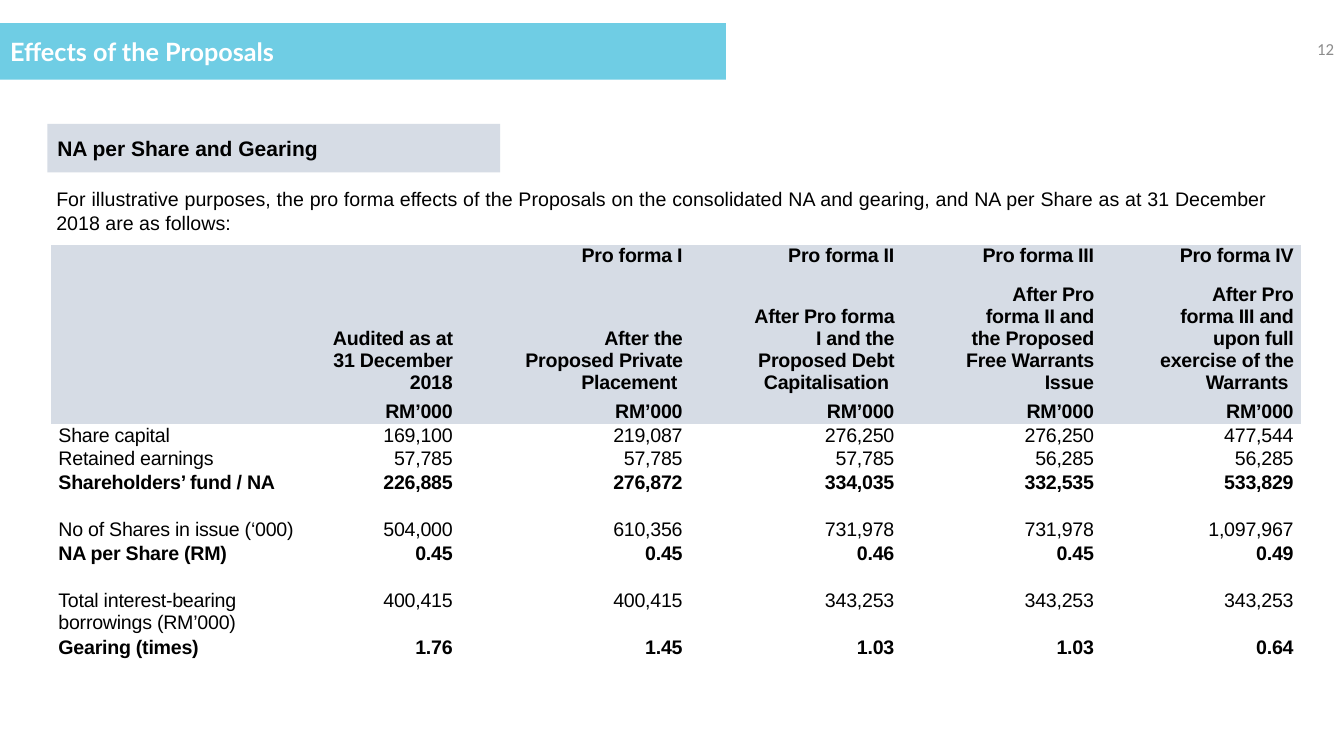
from lxml import etree
from pptx import Presentation
from pptx.dml.color import RGBColor
from pptx.enum.shapes import MSO_SHAPE
from pptx.enum.text import MSO_ANCHOR, MSO_AUTO_SIZE, PP_ALIGN
from pptx.oxml.ns import qn
from pptx.util import Inches, Pt

LEFT, RIGHT, JUSTIFY = PP_ALIGN.LEFT, PP_ALIGN.RIGHT, PP_ALIGN.JUSTIFY
TOP, MIDDLE, BOTTOM = MSO_ANCHOR.TOP, MSO_ANCHOR.MIDDLE, MSO_ANCHOR.BOTTOM
RECTANGLE = MSO_SHAPE.RECTANGLE
NO_AUTOFIT = MSO_AUTO_SIZE.NONE
TITLE_ONLY = 5
NO_GRID_STYLE = "{2D5ABB26-0587-4C30-8999-92F81FD0307C}"

COLORS = {
    "banner": "6FCDE4",
    "panel": "D6DCE5",
    "text": "000000",
    "white": "FFFFFF",
    "page": "8C8C8C",
}

COLUMN_WIDTHS = [2.5, 1.55, 2.28, 2.1, 1.98, 1.98]
TABLE_HEIGHT = 4.04
SCENARIO_HEIGHT, BASIS_HEIGHT, WRAPPED_HEIGHT = 0.31, 1.17, 0.46

HEADER_ROWS = [
    ["", "", "Pro forma I", "Pro forma II", "Pro forma III", "Pro forma IV"],
    ["", "Audited as at 31 December 2018",
     "After the Proposed Private Placement ",
     "After Pro forma I and the Proposed Debt Capitalisation ",
     "After Pro forma II and the Proposed Free Warrants Issue",
     "After Pro forma III and upon full exercise of the Warrants "],
    [""] + ["RM’000"] * 5,
]
BLANK_ROW = [""] * 6
BODY_ROWS = [
    ["Share capital", "169,100", "219,087", "276,250", "276,250", "477,544"],
    ["Retained earnings", "57,785", "57,785", "57,785", "56,285", "56,285"],
    ["Shareholders’ fund / NA", "226,885", "276,872", "334,035", "332,535", "533,829"],
    BLANK_ROW,
    ["No of Shares in issue (‘000)", "504,000", "610,356", "731,978", "731,978", "1,097,967"],
    ["NA per Share (RM)", "0.45", "0.45", "0.46", "0.45", "0.49"],
    BLANK_ROW,
    ["Total interest-bearing borrowings (RM’000)",
     "400,415", "400,415", "343,253", "343,253", "343,253"],
    ["Gearing (times)", "1.76", "1.45", "1.03", "1.03", "0.64"],
]
WRAPPED_LABEL = "Total interest-bearing borrowings (RM’000)"
BOLD_LABELS = {"Shareholders’ fund / NA", "NA per Share (RM)", "Gearing (times)"}


def rgb(name):
    return RGBColor.from_string(COLORS[name])


def write(frame, text, size=14, font="Arial", color="text", bold=False,
          align=LEFT, indent=0, spacing=0):
    paragraph = frame.paragraphs[0]
    paragraph.alignment = align
    if indent:
        properties = paragraph._p.get_or_add_pPr()
        properties.set("marL", str(Inches(indent)))
        properties.set("indent", "0")
    if not text:
        # Keeps an empty table row at the height of its neighbours
        end = etree.SubElement(paragraph._p, qn("a:endParaRPr"))
        end.set("sz", str(size * 100))
        return
    run = paragraph.add_run()
    run.text = text
    run.font.size = Pt(size)
    run.font.name = font
    run.font.bold = bold
    run.font.color.rgb = rgb(color)
    if spacing:
        run.font._element.set("spc", str(round(spacing * 100)))


def add_title(slide, text):
    title = slide.shapes.title
    title.left, title.top = Inches(0), Inches(0.23)
    title.width, title.height = Inches(7.2), Inches(0.56)
    title.fill.solid()
    title.fill.fore_color.rgb = rgb("banner")
    frame = title.text_frame
    frame.auto_size = NO_AUTOFIT
    frame.vertical_anchor = MIDDLE
    write(frame, text, size=18, font="Lato", color="white", bold=True)


def add_text(slide, text, left, top, width, height, anchor=TOP, **style):
    frame = slide.shapes.add_textbox(
        Inches(left), Inches(top), Inches(width), Inches(height)).text_frame
    frame.word_wrap = True
    frame.vertical_anchor = anchor
    write(frame, text, **style)


def add_section_label(slide, text):
    panel = slide.shapes.add_shape(
        RECTANGLE, Inches(0.47), Inches(1.23), Inches(4.49), Inches(0.48))
    panel.shadow.inherit = False
    panel.fill.solid()
    panel.fill.fore_color.rgb = rgb("panel")
    panel.line.fill.background()
    panel.text_frame.vertical_anchor = MIDDLE
    write(panel.text_frame, text, size=15, bold=True)


def fill_cell(cell, text, header, bold, first_column, indent, bottom_gap):
    cell.margin_left = cell.margin_right = Inches(0.07)
    cell.margin_top, cell.margin_bottom = Inches(0), Inches(bottom_gap)
    cell.vertical_anchor = BOTTOM if bottom_gap else TOP
    if header:
        cell.fill.solid()
        cell.fill.fore_color.rgb = rgb("panel")
    else:
        cell.fill.background()
    write(cell.text_frame, text, bold=bold, spacing=-0.2,
          align=LEFT if first_column else RIGHT, indent=indent)


def add_effects_table(slide):
    rows = HEADER_ROWS + BODY_ROWS
    table = slide.shapes.add_table(
        len(rows), len(COLUMN_WIDTHS), Inches(0.51), Inches(2.43),
        Inches(sum(COLUMN_WIDTHS)), Inches(TABLE_HEIGHT)).table
    table.first_row = table.horz_banding = False
    table._tbl.tblPr.find(qn("a:tableStyleId")).text = NO_GRID_STYLE
    for column, width in zip(table.columns, COLUMN_WIDTHS):
        column.width = Inches(width)

    # Single-line rows share the height left by the three taller ones
    tall = SCENARIO_HEIGHT + BASIS_HEIGHT + WRAPPED_HEIGHT
    line_height = (TABLE_HEIGHT - tall) / (len(rows) - 3)
    for r, values in enumerate(rows):
        label = values[0]
        header = r < len(HEADER_ROWS)
        basis = r == 1
        height = {0: SCENARIO_HEIGHT, 1: BASIS_HEIGHT}.get(r, line_height)
        if label == WRAPPED_LABEL:
            height = WRAPPED_HEIGHT
        table.rows[r].height = Inches(height)
        for c, text in enumerate(values):
            indent = 0 if c == 0 else 0.13 if basis and c == 1 else 0.5
            fill_cell(table.cell(r, c), text, header,
                      bold=header or label in BOLD_LABELS, first_column=c == 0,
                      indent=indent, bottom_gap=0.07 if basis else 0)


def main():
    deck = Presentation()
    deck.slide_width, deck.slide_height = Inches(13.33), Inches(7.5)
    slide = deck.slides.add_slide(deck.slide_layouts[TITLE_ONLY])

    # Heading and page number
    add_title(slide, "Effects of the Proposals")
    add_text(slide, "12", 10.33, 0.28, 3, 0.4, anchor=MIDDLE,
             size=12, font="Calibri", color="page", align=RIGHT)

    # Section label and introduction
    add_section_label(slide, "NA per Share and Gearing")
    add_text(slide, "For illustrative purposes, the pro forma effects of the "
             "Proposals on the consolidated NA and gearing, and NA per Share "
             "as at 31 December 2018 are as follows:",
             0.46, 1.81, 12.21, 0.57, align=JUSTIFY)

    # Pro forma effects
    add_effects_table(slide)
    deck.save("out.pptx")


if __name__ == "__main__":
    main()
